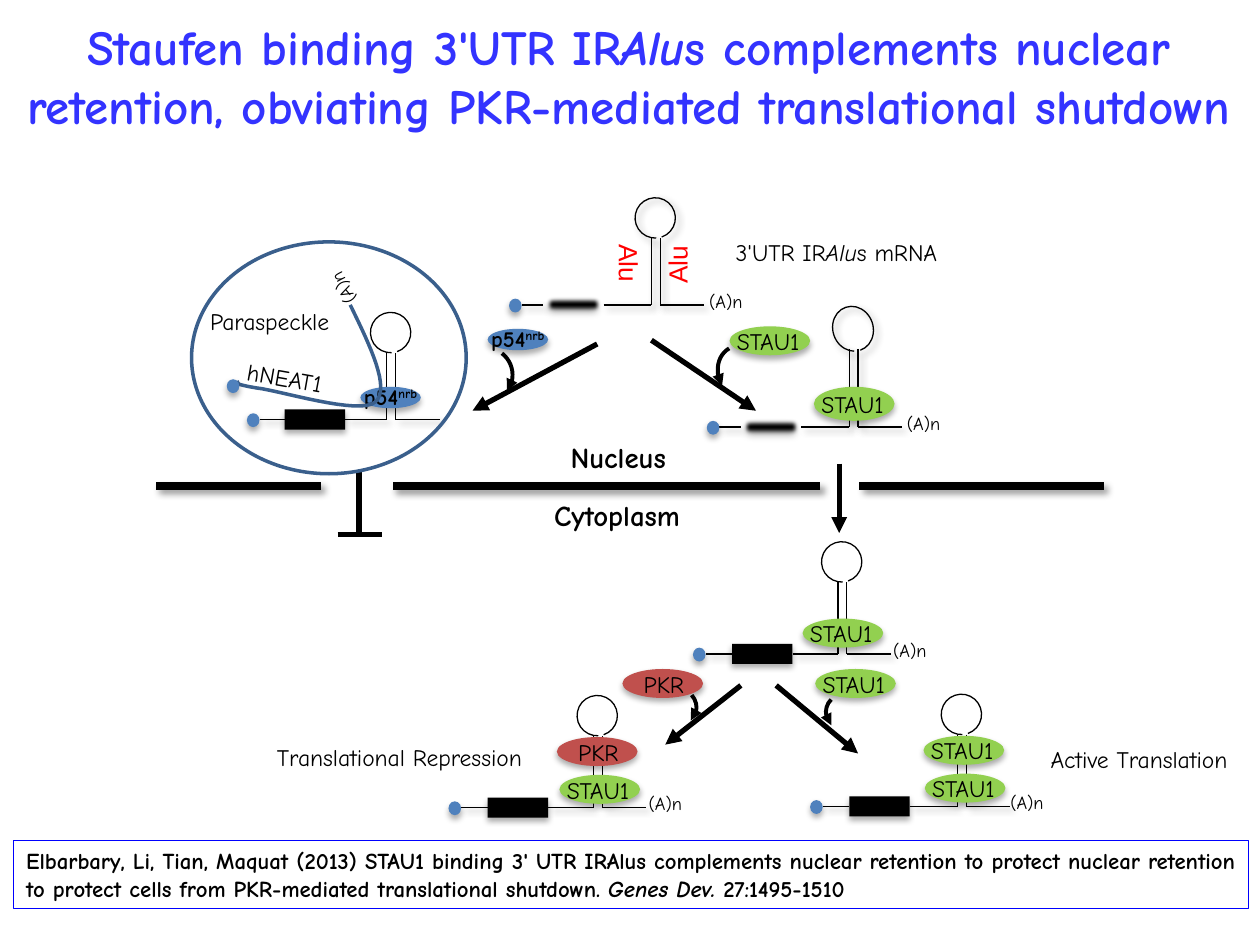
import dataclasses

import lxml.etree
import pptx
import pptx.dml.color
import pptx.enum.shapes
import pptx.enum.text
import pptx.oxml.ns
import pptx.util

Inches = pptx.util.Inches
Shape = pptx.enum.shapes.MSO_SHAPE
Align = pptx.enum.text.PP_ALIGN
BLACK, BLUE, GREEN, RED, OUTLINE = "000000", "4F81BD", "92D050", "C0504D", "3A5F8C"
LINE_SHADOW, SHAPE_SHADOW = (40, 4, 3, 45), (32, 3.5, 2.2, 90)
P54 = [("p54", ""), ("nrb", "sup")]


def rgb(value):
    """Turn a hex string into a colour."""
    return pptx.dml.color.RGBColor.from_string(value)


def add_child(parent, tag, **attributes):
    """Append a DrawingML element with the given attributes."""
    child = lxml.etree.SubElement(parent, pptx.oxml.ns.qn(tag))
    for key, value in attributes.items():
        child.set(key, str(value))
    return child


def set_effects(part, shadow=None, soft=0):
    """Give a part its own shadow and soft edge, or none."""
    effects = add_child(part._element.spPr, "a:effectLst")
    if shadow:
        alpha, blur, distance, angle = shadow
        outer = add_child(effects, "a:outerShdw", blurRad=pptx.util.Pt(blur),
                          dist=pptx.util.Pt(distance), dir=angle * 60000, rotWithShape=0)
        add_child(add_child(outer, "a:srgbClr", val=BLACK), "a:alpha", val=alpha * 1000)
    if soft:
        add_child(effects, "a:softEdge", rad=Inches(soft))


def set_line(part, color, width, end=None):
    """Set the stroke and an optional arrowhead at headEnd or tailEnd."""
    part.line.color.rgb = rgb(color)
    part.line.width = pptx.util.Pt(width)
    if end:
        add_child(part.line._get_or_add_ln(), "a:" + end, type="triangle")


def write(frame, runs, size, color=BLACK, bold=False, align=Align.LEFT, font="Comic Neue"):
    """Write styled runs into a wrapping text frame."""
    frame.word_wrap = True
    paragraph = frame.paragraphs[0]
    paragraph.alignment = align
    for text, style in [(runs, "")] if isinstance(runs, str) else runs:
        run = paragraph.add_run()
        run.text = text
        run.font.name, run.font.size = font, pptx.util.Pt(size)
        run.font.color.rgb = rgb(color)
        run.font.bold, run.font.italic = bold, style == "i"
        if style == "sup":
            run._r.get_or_add_rPr().set("baseline", "30000")


@dataclasses.dataclass
class Region:
    """A part of the slide whose contents are placed from its top left corner."""
    slide: object
    left: float
    top: float

    def point(self, x, y):
        """Give the slide position of a point in the region."""
        return Inches(self.left + x), Inches(self.top + y)

    def shape(self, kind, x, y, w, h, fill=None, line=None, shadow=SHAPE_SHADOW, soft=0):
        """Add a preset shape, hollow unless filled."""
        part = self.slide.shapes.add_shape(kind, *self.point(x, y), Inches(w), Inches(h))
        if fill:
            part.fill.solid()
            part.fill.fore_color.rgb = rgb(fill)
        else:
            part.fill.background()
        if line:
            set_line(part, *line)
        else:
            part.line.fill.background()
        set_effects(part, shadow, soft)
        return part

    def line(self, x1, y1, x2, y2, width=0.75, shadow=None, end=None):
        """Add a black straight line."""
        part = self.slide.shapes.add_connector(
            pptx.enum.shapes.MSO_CONNECTOR.STRAIGHT, *self.point(x1, y1), *self.point(x2, y2))
        set_line(part, BLACK, width, end)
        set_effects(part, shadow)
        return part

    def arrow(self, *ends):
        """Add a thick arrow."""
        self.line(*ends, 3, end="tailEnd")

    def label(self, x, y, w, h, runs, size=13.5, rotation=0, **style):
        """Add a text box."""
        box = self.slide.shapes.add_textbox(*self.point(x, y), Inches(w), Inches(h))
        box.rotation = rotation
        write(box.text_frame, runs, size, **style)

    def hook(self, x, y, w, h, rotation, end):
        """Add a curved arrow showing a protein joining."""
        self.shape(Shape.ARC, x, y, w, h, line=(BLACK, 2.25, end), shadow=None).rotation = rotation


def add_protein(region, x, y, name, h=0.23):
    """Draw a protein oval with its name."""
    region.shape(Shape.OVAL, x, y, 0.64, h, GREEN if name == "STAU1" else RED)
    shift = -0.04 if name == "STAU1" else 0.07
    region.label(x + shift, y + h / 2 - 0.16, 0.85, 0.33, name)


def add_p54(region, x, y):
    """Draw the p54 oval with its name."""
    region.shape(Shape.OVAL, x, y, 0.48, 0.17, BLUE)
    region.label(x - 0.07, y - 0.08, 0.72, 0.32, P54, 12.8, bold=True)


def add_mrna(region, x, base, stem, height, exon=0.31, loop=0.32, soft=0,
             shadow=None, tail="(A)n"):
    """Draw a capped mRNA with an exon, a hairpin and a tail along its baseline."""
    mrna = Region(region.slide, region.left + x, region.top + base)
    exon_box = mrna.shape(Shape.RECTANGLE, exon, -0.08, 0.48, 0.16, BLACK, soft=soft)
    mrna.line(0.1, 0, exon, 0, shadow=LINE_SHADOW).end_connect(exon_box, 1)
    mrna.shape(Shape.OVAL, 0, -0.05, 0.1, 0.11, BLUE)
    mrna.line(exon + 0.48, 0, stem, 0, shadow=LINE_SHADOW).begin_connect(exon_box, 3)
    for strand in (stem, stem + 0.07):
        mrna.line(strand, -height, strand, 0, shadow=shadow)
    hairpin = mrna.shape(Shape.ARC, stem + 0.03 - loop / 2, -height - 0.32, loop, 0.32,
                         line=(BLACK, 0.75), shadow=shadow)
    hairpin.adjustments[0] = 15.75 * 0.6
    hairpin.rotation = 71.3
    mrna.line(stem + 0.07, 0, stem + 0.42, 0, shadow=LINE_SHADOW)
    if tail:
        mrna.label(1.49, -0.17, 0.8, 0.28, tail, 10.5)


def add_nucleus(region):
    """Draw the mRNA in the nucleus and its two fates."""
    region.label(2.24, 0.34, 2.13, 0.34, [("3'UTR IR", ""), ("Alu", "i"), ("s mRNA", "")])
    soft_mrna = {"exon": 0.27, "soft": 0.04, "shadow": LINE_SHADOW}
    add_mrna(region, 0.54, 0.92, 1.13, 0.53, **soft_mrna)
    add_mrna(region, 2.11, 1.89, 1.13, 0.62, loop=0.36, **soft_mrna)
    add_protein(region, 2.96, 1.57, "STAU1", 0.27)
    add_protein(region, 2.29, 1.09, "STAU1")
    add_p54(region, 0.37, 1.11)
    region.arrow(1.24, 1.23, 0.25, 1.76)
    region.arrow(1.67, 1.2, 2.5, 1.76)
    region.hook(0.14, 1.26, 0.43, 0.42, 38, "tailEnd")
    region.hook(2.17, 1.27, 0.46, 0.39, 240.5, "headEnd")
    for x, y, w, h, turn in ((1.19, 0.47, 0.61, 0.35, 90), (1.75, 0.29, 0.51, 0.61, 270)):
        region.label(x, y, w, h, "Alu", 15, turn, color="FF0000", font="Arial")


def add_paraspeckle(region):
    """Draw the paraspeckle holding mRNA, p54 and hNEAT1."""
    region.label(0.07, 0.49, 1.3, 0.33, "Paraspeckle")
    add_mrna(region, 0.46, 1.43, 1.11, 0.53, exon=0.3, tail=None)
    add_p54(region, 1.36, 1.17)
    region.label(0.73, 0.09, 0.82, 0.28, "(A)n", 10.5, 242.3)
    add_strand(region, [(1.28, 0.52), (1.44, 0.85), (1.6, 1.18), (1.48, 1.29), (1.36, 1.4),
                        (0.72, 1.2), (0.54, 1.18), (0.36, 1.15), (0.38, 1.14), (0.4, 1.13)])
    region.shape(Shape.OVAL, 0.3, 1.11, 0.1, 0.11, BLUE)
    region.shape(Shape.OVAL, 0.02, 0.02, 2.18, 1.84, line=(OUTLINE, 2), shadow=None)
    region.label(0.36, 0.95, 0.98, 0.33, "hNEAT1", rotation=10)


def add_strand(region, controls, steps=16):
    """Draw a chain of cubic curves as one smooth outline."""
    points = []
    for first in range(0, len(controls) - 1, 3):
        for step in range(steps + 1):
            t = step / steps
            weights = ((1 - t) ** 3, 3 * t * (1 - t) ** 2, 3 * t * t * (1 - t), t ** 3)
            curve = list(zip(weights, controls[first:first + 4]))
            points.append(region.point(sum(k * p[0] for k, p in curve),
                                       sum(k * p[1] for k, p in curve)))
    builder = region.slide.shapes.build_freeform(*points[0])
    builder.add_line_segments(points[1:], close=False)
    strand = builder.convert_to_shape()
    strand.fill.background()
    set_line(strand, OUTLINE, 2)
    set_effects(strand)


def add_membrane(region):
    """Draw the nuclear membrane with the blocked and the open passage."""
    for start, stop in ((0.04, 1.35), (1.92, 5.31), (5.62, 7.56)):
        region.line(start, 0.46, stop, 0.46, 4.5, LINE_SHADOW)
    region.label(3.23, 0.04, 1.11, 0.38, "Nucleus", 16.5, bold=True)
    region.label(3.1, 0.5, 1.48, 0.38, "Cytoplasm", 16.5, bold=True)
    region.arrow(5.46, 0.28, 5.46, 0.83)
    region.line(1.65, 0.33, 1.65, 0.83, 3)
    region.line(1.48, 0.84, 1.83, 0.84, 3)


def add_cytoplasm(region):
    """Draw the exported mRNA and its repression or translation."""
    for x, base, stem in ((4, 0.89, 1.15), (2.06, 2.11, 1.15), (4.93, 2.1, 1.17)):
        add_mrna(region, x, base, stem, 0.57)
    for x, y, name in ((4.87, 0.61, "STAU1"), (2.92, 1.55, "PKR"), (2.94, 1.85, "STAU1"),
                       (5.83, 1.54, "STAU1"), (5.84, 1.84, "STAU1"),
                       (3.44, 1.01, "PKR"), (4.97, 1.01, "STAU1")):
        add_protein(region, x, y, name)
    region.arrow(4.38, 1.14, 3.78, 1.61)
    region.arrow(4.66, 1.14, 5.31, 1.68)
    region.hook(5.05, 1.22, 0.3, 0.28, 226.6, "headEnd")
    region.hook(3.74, 1.17, 0.29, 0.28, 48.2, "tailEnd")
    region.label(6.52, 1.56, 2.04, 0.33, "Active Translation", align=Align.CENTER)
    region.label(0.03, 1.55, 3.28, 0.33, "Translational Repression", align=Align.CENTER)


def add_title(region):
    """Write the title."""
    region.label(0, 0, 10.02, 1.51, [
        ("Staufen binding 3'UTR IR", ""), ("Alu", "i"),
        ("s complements nuclear retention, obviating PKR-mediated translational shutdown", "")],
        28, color="3333FF", bold=True, align=Align.CENTER)


def add_citation(region):
    """Write the framed reference."""
    frame = region.shape(Shape.RECTANGLE, 0, 0, 9.8, 0.54, line=("0000FF", 0.75), shadow=None)
    write(frame.text_frame, [
        ("Elbarbary, Li, Tian, Maquat (2013) STAU1 binding 3' UTR IRAlus complements nuclear "
         "retention to protect nuclear retention to protect cells from PKR-mediated "
         "translational shutdown. ", ""), ("Genes Dev. ", "i"), ("27:1495-1510", "")],
        13, bold=True)


def main():
    """Build the slide and save it."""
    deck = pptx.Presentation()
    deck.slide_width, deck.slide_height = Inches(10), Inches(7.5)
    slide = deck.slides.add_slide(deck.slide_layouts[6])
    for draw, left, top in ((add_nucleus, 3.5, 1.5), (add_membrane, 1.2, 3.4),
                            (add_paraspeckle, 1.5, 1.9), (add_cytoplasm, 1.5, 4.3),
                            (add_title, -0.02, 0.08), (add_citation, 0.11, 6.67)):
        draw(Region(slide, left, top))
    deck.save("out.pptx")


if __name__ == "__main__":
    main()
